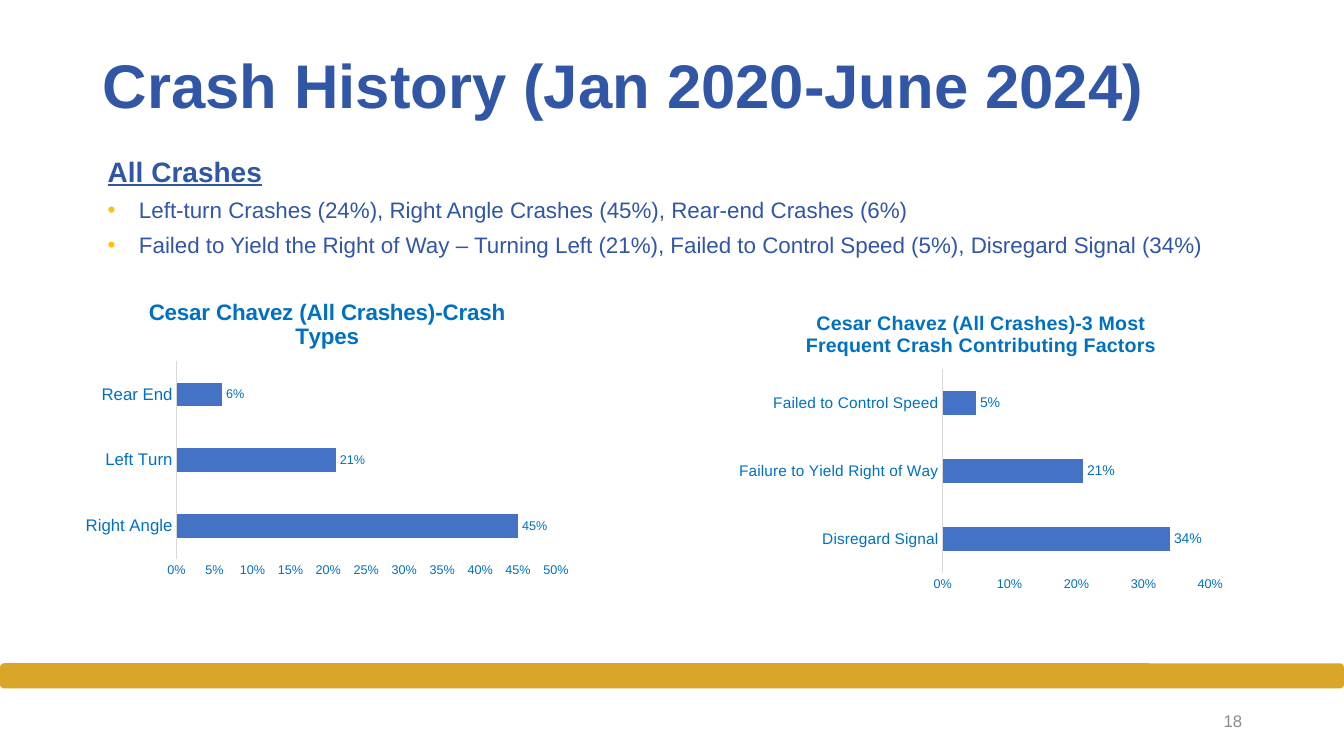
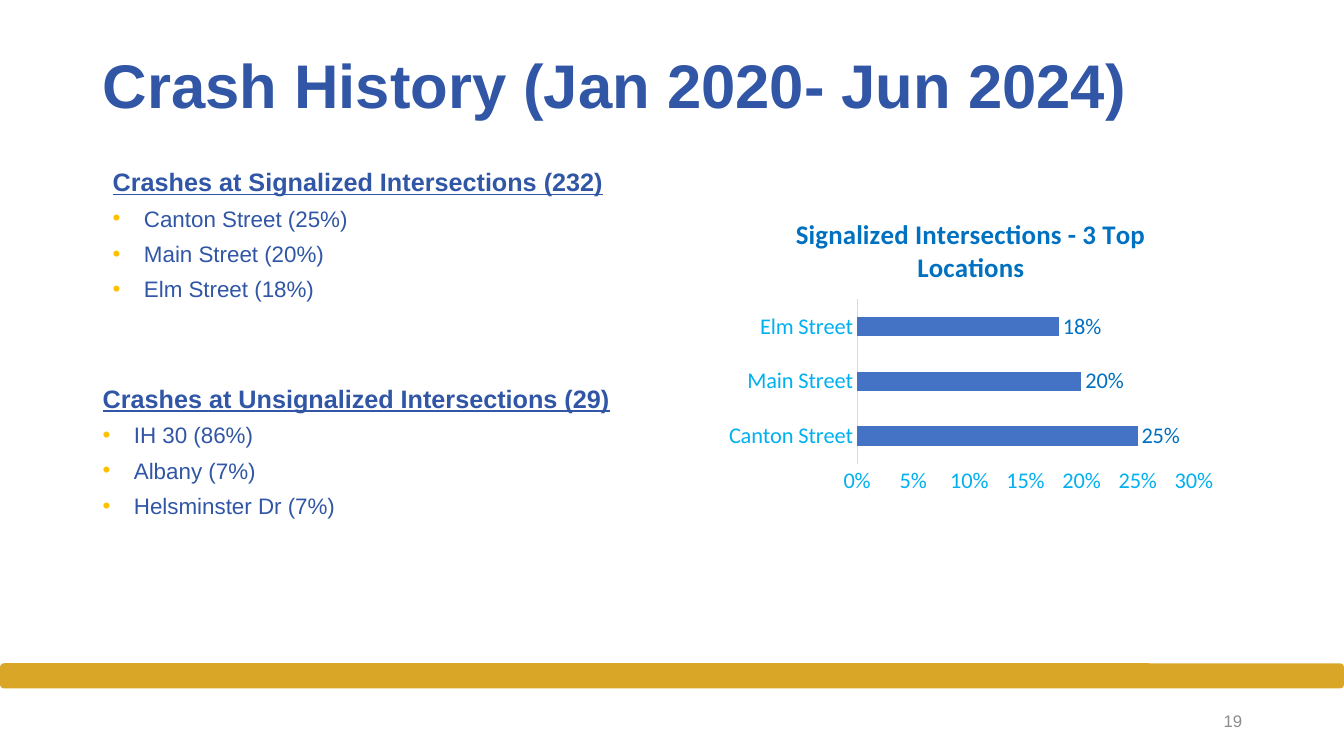
from lxml import etree
from pptx import Presentation
from pptx.chart.data import CategoryChartData
from pptx.dml.color import RGBColor
from pptx.enum import chart as ch, shapes, text
from pptx.oxml.ns import qn
from pptx.util import Inches, Pt

NAVY = RGBColor(0x30, 0x56, 0xA5)
GOLD = RGBColor(0xDA, 0xA6, 0x27)
AMBER = RGBColor(0xFF, 0xC0, 0x00)
GREY = RGBColor(0x8C, 0x8C, 0x8C)
AXIS_GREY = RGBColor(0xD9, 0xD9, 0xD9)
BAR_BLUE = RGBColor(0x44, 0x72, 0xC4)
CHART_BLUE = RGBColor(0x00, 0x70, 0xC0)
SKY = RGBColor(0x00, 0xB0, 0xF0)

# Content: lists are (box, heading, heading size, bullets)
SLIDES = [
    {
        "title": "Crash History (Jan 2020-June 2024)",
        "number": 18,
        "lists": [
            ((0.97, 1.48, 12.09, 1.14), "All Crashes", 20, [
                "Left-turn Crashes (24%), Right Angle Crashes (45%), Rear-end Crashes (6%)",
                "Failed to Yield the Right of Way – Turning Left (21%), "
                "Failed to Control Speed (5%), Disregard Signal (34%)"]),
        ],
        "charts": [
            {"box": (0.75, 2.8, 4.99, 2.99),
             "title": "Cesar Chavez (All Crashes)-Crash Types",
             "shares": {"Right Angle": 0.45, "Left Turn": 0.21, "Rear End": 0.06},
             "top": 0.5, "step": 0.05, "font": "Arial", "axis_color": CHART_BLUE,
             "title_size": 16, "category_size": 12, "value_size": 9, "label_size": 9},
            {"box": (7.23, 2.93, 5, 3),
             "title": "Cesar Chavez (All Crashes)-3 Most Frequent Crash Contributing Factors",
             "shares": {"Disregard Signal": 0.34, "Failure to Yield Right of Way": 0.21,
                        "Failed to Control Speed": 0.05},
             "top": 0.4, "step": 0.1, "font": "Arial", "axis_color": CHART_BLUE,
             "title_size": 14, "category_size": 11, "value_size": 9, "label_size": 10},
        ],
    },
    {
        "title": "Crash History (Jan 2020- Jun 2024)",
        "number": 19,
        "lists": [
            ((1.02, 1.6, 5.47, 1.46), "Crashes at Signalized Intersections (232)", 18,
             ["Canton Street (25%)", "Main Street (20%)", "Elm Street (18%)"]),
            ((0.92, 3.75, 5.75, 1.46), "Crashes at Unsignalized Intersections (29)", 18,
             ["IH 30 (86%)", "Albany (7%)", "Helsminster Dr (7%)"]),
        ],
        "charts": [
            {"box": (7.13, 1.97, 5, 3),
             "title": "Signalized Intersections - 3 Top Locations",
             "shares": {"Canton Street": 0.25, "Main Street": 0.2, "Elm Street": 0.18},
             "top": 0.3, "step": 0.05, "font": "Calibri", "axis_color": SKY,
             "title_size": 19.2, "category_size": 16, "value_size": 16, "label_size": 16},
        ],
    },
]


def style_font(font, size, color, name="Arial", bold=False, underline=False):
    font.size, font.name = Pt(size), name
    font.bold, font.underline = bold, underline
    font.color.rgb = color


def add_bullet(paragraph):
    props = paragraph._p.get_or_add_pPr()
    props.set("marL", str(Inches(0.31)))
    props.set("indent", str(-Inches(0.31)))
    color = etree.SubElement(props, qn("a:buClr"))
    etree.SubElement(color, qn("a:srgbClr"), val=str(AMBER))
    etree.SubElement(props, qn("a:buFont"), typeface="Arial")
    etree.SubElement(props, qn("a:buChar"), char="•")


def write(frame, words, first=True, bullet=False, align=None, spacing=None, after=0, **font):
    paragraph = frame.paragraphs[0] if first else frame.add_paragraph()
    paragraph.space_after = Pt(after)
    if align is not None:
        paragraph.alignment = align
    if spacing:
        paragraph.line_spacing = spacing
    if bullet:
        add_bullet(paragraph)
    run = paragraph.add_run()
    run.text = words
    style_font(run.font, **font)


def add_frame(slide, box, anchor=text.MSO_ANCHOR.TOP):
    frame = slide.shapes.add_textbox(*map(Inches, box)).text_frame
    frame.word_wrap = True
    frame.vertical_anchor = anchor
    return frame


def add_base(slide, title, number):
    # Gold band, title and page number
    band = slide.shapes.add_shape(shapes.MSO_SHAPE.ROUNDED_RECTANGLE,
                                  *map(Inches, (0, 6.58, 13.33, 0.25)))
    band.shadow.inherit = False
    band.fill.solid()
    band.fill.fore_color.rgb = GOLD
    band.line.fill.background()
    middle = text.MSO_ANCHOR.MIDDLE
    write(add_frame(slide, (0.92, 0.15, 11.5, 1.45), middle), title,
          spacing=0.9, size=44, color=NAVY, bold=True)
    write(add_frame(slide, (9.42, 6.95, 3, 0.4), middle), str(number),
          align=text.PP_ALIGN.RIGHT, size=12, color=GREY)


def add_list(slide, box, heading, heading_size, bullets):
    frame = add_frame(slide, box)
    frame.auto_size = text.MSO_AUTO_SIZE.SHAPE_TO_FIT_TEXT
    write(frame, heading, after=6, size=heading_size, color=NAVY, bold=True, underline=True)
    for words in bullets:
        write(frame, words, first=False, bullet=True, after=6, size=16, color=NAVY)


def add_bars(slide, bars):
    data = CategoryChartData(number_format="0%")
    data.categories = list(bars["shares"])
    data.add_series("Share of crashes", list(bars["shares"].values()))
    chart = slide.shapes.add_chart(ch.XL_CHART_TYPE.BAR_CLUSTERED,
                                   *map(Inches, bars["box"]), data).chart
    name = bars["font"]
    chart.has_legend = False
    chart.has_title = True
    chart.chart_title.include_in_layout = False
    write(chart.chart_title.text_frame, bars["title"], size=bars["title_size"],
          color=CHART_BLUE, name=name, bold=True)

    # Axes
    categories, values = chart.category_axis, chart.value_axis
    for axis, size in ((categories, bars["category_size"]), (values, bars["value_size"])):
        axis.major_tick_mark = axis.minor_tick_mark = ch.XL_TICK_MARK.NONE
        axis.has_major_gridlines = False
        style_font(axis.tick_labels.font, size, bars["axis_color"], name)
    categories.format.line.color.rgb = AXIS_GREY
    categories.format.line.width = Pt(0.75)
    values.format.line.fill.background()
    values.minimum_scale, values.maximum_scale = 0, bars["top"]
    values.major_unit = bars["step"]
    values.tick_labels.number_format = "0%"
    values.tick_labels.number_format_is_linked = False

    # Bars and their labels
    plot = chart.plots[0]
    plot.gap_width = 182
    plot.vary_by_categories = False
    fill = plot.series[0].format.fill
    fill.solid()
    fill.fore_color.rgb = BAR_BLUE
    plot.has_data_labels = True
    labels = plot.data_labels
    labels.show_value = True
    labels.number_format, labels.number_format_is_linked = "0%", False
    labels.position = ch.XL_LABEL_POSITION.OUTSIDE_END
    style_font(labels.font, bars["label_size"], CHART_BLUE, name)


def main():
    deck = Presentation()
    deck.slide_width, deck.slide_height = Inches(13.33), Inches(7.5)
    for content in SLIDES:
        slide = deck.slides.add_slide(deck.slide_layouts[6])
        add_base(slide, content["title"], content["number"])
        for crash_list in content["lists"]:
            add_list(slide, *crash_list)
        for bars in content["charts"]:
            add_bars(slide, bars)
    deck.save("out.pptx")


if __name__ == "__main__":
    main()
